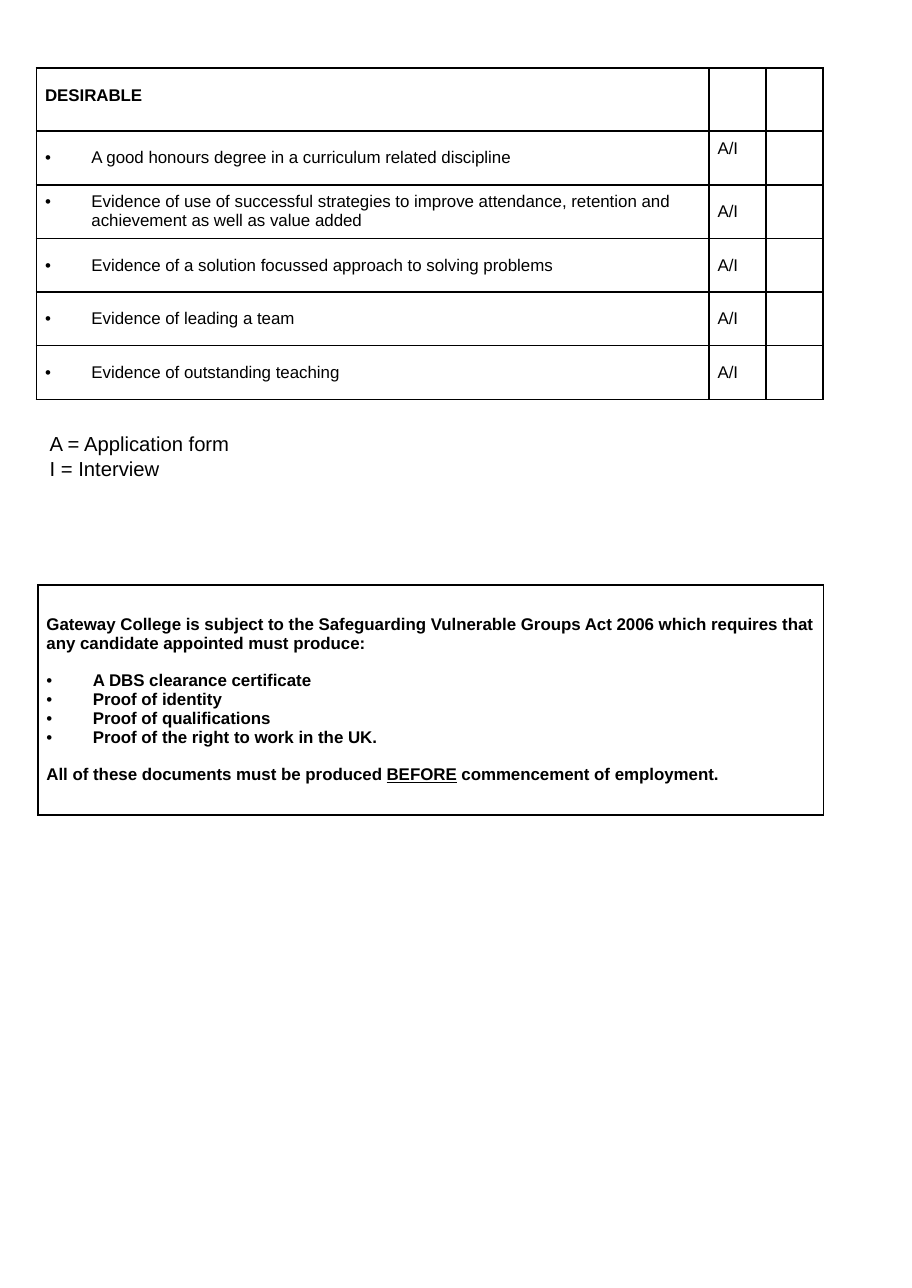
import lxml.etree
import pptx
import pptx.dml.color
import pptx.enum.text
import pptx.oxml.ns
import pptx.util
from pptx.util import Cm

BLACK = pptx.dml.color.RGBColor(0, 0, 0)
MIDDLE = pptx.enum.text.MSO_ANCHOR.MIDDLE
TOP = pptx.enum.text.MSO_ANCHOR.TOP
LINE_GAP = pptx.util.Pt(11)
BLANK_LINE = Cm(0.39)
HANGING = Cm(0.97)

CRITERIA = [
    "A good honours degree in a curriculum related discipline",
    "Evidence of use of successful strategies to improve attendance, retention and achievement as well as value added",
    "Evidence of a solution focussed approach to solving problems",
    "Evidence of leading a team",
    "Evidence of outstanding teaching",
]
DOCUMENTS = [
    "A DBS clearance certificate",
    "Proof of identity",
    "Proof of qualifications",
    "Proof of the right to work in the UK.",
]


def apply_format(target, values):
    for name, value in values.items():
        setattr(target, name, value)


def add_element(parent, tag, **attributes):
    return lxml.etree.SubElement(parent, pptx.oxml.ns.qn(tag), attributes)


def write_paragraph(text_frame, runs, size=10, bold=False, bullet=False, space_before=0):
    paragraph = text_frame.paragraphs[0]
    if paragraph.runs:
        paragraph = text_frame.add_paragraph()
    if bullet:
        properties = paragraph._p.get_or_add_pPr()
        properties.set("marL", str(HANGING))
        properties.set("indent", str(-HANGING))
        add_element(properties, "a:buFont", typeface="Arial")
        add_element(properties, "a:buChar", char="•")
    if space_before:
        paragraph.space_before = space_before
    for text, underline in runs:
        run = paragraph.add_run()
        run.text = text
        run.font.color.rgb = BLACK
        apply_format(run.font, {
            "name": "Arial",
            "size": pptx.util.Pt(size),
            "bold": bold,
            "underline": underline,
        })


def format_cell(cell):
    apply_format(cell, {
        "margin_left": Cm(0.18),
        "margin_right": Cm(0.18),
        "margin_top": 0,
        "margin_bottom": 0,
        "vertical_anchor": MIDDLE,
    })
    properties = cell._tc.get_or_add_tcPr()
    for side in ("a:lnL", "a:lnR", "a:lnT", "a:lnB"):
        border = add_element(properties, side, w=str(pptx.util.Pt(1)))
        fill = add_element(border, "a:solidFill")
        add_element(fill, "a:srgbClr", val=str(BLACK))
    cell.fill.background()


def add_grid(slide, left, top, widths, heights):
    frame = slide.shapes.add_table(
        len(heights), len(widths), left, top, sum(widths), sum(heights))
    table = frame.table
    apply_format(table, {"first_row": False, "horz_banding": False})
    for column, width in zip(table.columns, widths):
        column.width = width
    for row, height in zip(table.rows, heights):
        row.height = height
    for cell in table.iter_cells():
        format_cell(cell)
    return table


def add_criteria(slide, left, top, width):
    mark_width = Cm(1.19)
    table = add_grid(
        slide, left, top,
        [width - 2 * mark_width, mark_width, mark_width],
        [Cm(1.32)] + [Cm(1.12)] * len(CRITERIA))
    heading = table.cell(0, 0)
    apply_format(heading, {"vertical_anchor": TOP, "margin_top": BLANK_LINE})
    write_paragraph(heading.text_frame, [("DESIRABLE", False)], bold=True)
    for row, criterion in enumerate(CRITERIA, 1):
        write_paragraph(table.cell(row, 0).text_frame, [(criterion, False)], bullet=True)
        write_paragraph(table.cell(row, 1).text_frame, [("A/I", False)])
    table.cell(1, 1).margin_bottom = BLANK_LINE


def add_legend(slide, left, top, width, height):
    text_frame = slide.shapes.add_textbox(left, top, width, height).text_frame
    apply_format(text_frame, {"word_wrap": True, "vertical_anchor": TOP})
    for text in ("A = Application form", "I = Interview"):
        write_paragraph(text_frame, [(text, False)], size=12)


def add_notice(slide, left, top, width, height):
    text_frame = add_grid(slide, left, top, [width], [height]).cell(0, 0).text_frame
    write_paragraph(text_frame, [(
        "Gateway College is subject to the Safeguarding Vulnerable Groups Act 2006 "
        "which requires that any candidate appointed must produce:", False)], bold=True)
    for index, document in enumerate(DOCUMENTS):
        write_paragraph(text_frame, [(document, False)], bold=True, bullet=True,
                        space_before=0 if index else LINE_GAP)
    write_paragraph(text_frame, [
        ("All of these documents must be produced ", False),
        ("BEFORE", True),
        (" commencement of employment.", False),
    ], bold=True, space_before=LINE_GAP)


def main():
    presentation = pptx.Presentation()
    apply_format(presentation, {"slide_width": Cm(19.05), "slide_height": Cm(26.9)})
    slide = presentation.slides.add_slide(presentation.slide_layouts[6])
    add_notice(slide, Cm(0.79), Cm(12.22), Cm(16.41), Cm(4.8))
    add_legend(slide, Cm(0.79), Cm(8.89), Cm(16.41), Cm(1.96))
    add_criteria(slide, Cm(0.76), Cm(1.42), Cm(16.43))
    presentation.save("out.pptx")


if __name__ == "__main__":
    main()
